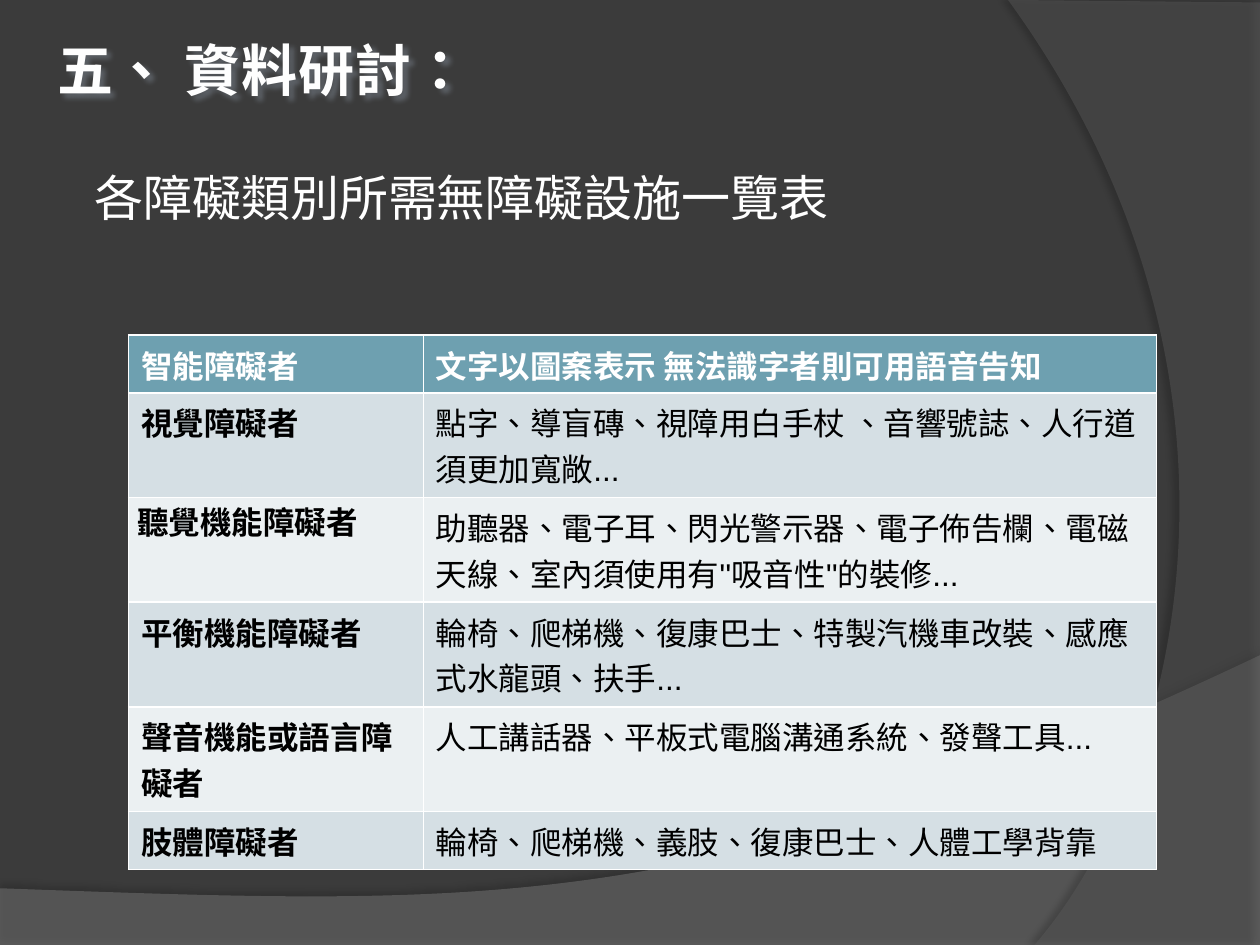
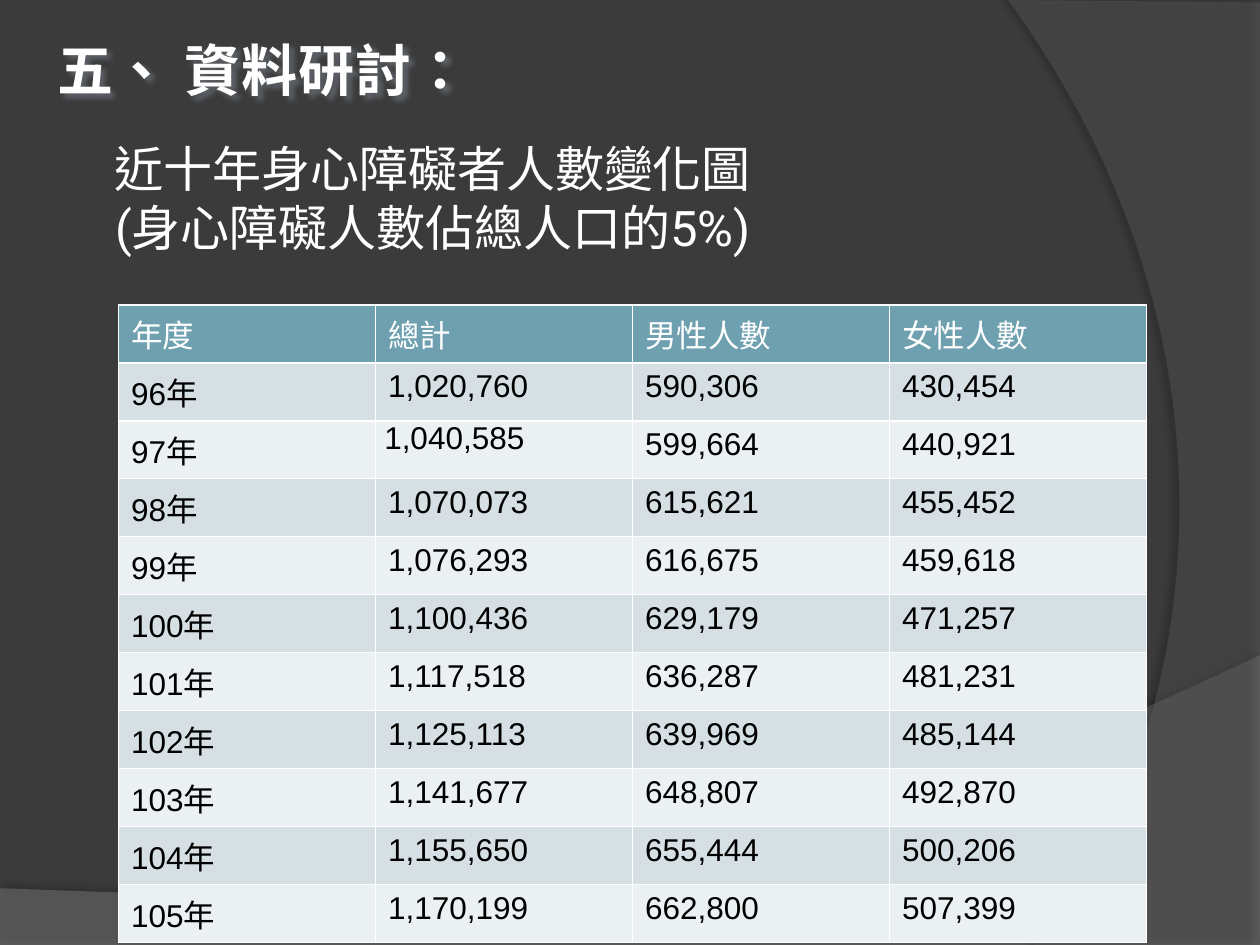
from dataclasses import dataclass

from lxml import etree
from pptx import Presentation
from pptx.dml.color import RGBColor
from pptx.enum.text import MSO_ANCHOR as Anchor, MSO_AUTO_SIZE as AutoSize, PP_ALIGN as Align
from pptx.oxml.ns import qn
from pptx.util import Inches, Pt

# Shared colours, fonts and sizes
BACKGROUND = RGBColor(0x3B, 0x3B, 0x3B)
WAVE_GREY = RGBColor(0x7F, 0x7F, 0x7F)
ARC_GREY = RGBColor(0x5E, 0x5E, 0x5E)
WHITE = RGBColor(0xFF, 0xFF, 0xFF)
HEADING_WHITE = RGBColor(0xFE, 0xFE, 0xFE)
HEADING_OUTLINE = RGBColor(0x71, 0x78, 0x81)
BLACK = RGBColor(0, 0, 0)
HEADER_FILL = RGBColor(0x6E, 0xA0, 0xB0)
BAND_FILLS = (RGBColor(0xEB, 0xF0, 0xF2), RGBColor(0xD5, 0xDF, 0xE4))
BODY_FONT = "Arial"
TITLE_FONT = "Roboto"
LANGUAGE = "zh-TW"
HEADING = "五、 資料研討： "
ONE_LINE = 0.46
TWO_LINES = 0.83

Point = tuple[float, float]


@dataclass(frozen=True)
class Shadow:
    alpha: int
    blur: float
    distance: float
    angle: int
    color: RGBColor = BLACK


@dataclass(frozen=True)
class Band:
    """Closed outline: straight corners, then one Bezier curve from the last corner."""
    corners: tuple[Point, ...]
    curve: tuple[Point, Point, Point]
    color: RGBColor
    alpha: int
    shadow: Shadow


@dataclass(frozen=True)
class Title:
    text: str
    left: float
    width: float
    align: Align


@dataclass(frozen=True)
class Grid:
    left: float
    top: float
    columns: tuple[float, ...]
    heights: tuple[float, ...]
    rows: tuple[tuple[str, ...], ...]
    bold_heads: bool
    tight_cell: tuple[int, int]


BANDS = (
    Band(((0, 7.05), (0, 7.51), (10, 7.51), (10, 5.2)),
         ((5.59, 7.29), (3.91, 7.19), (0, 7.05)),
         WAVE_GREY, 45, Shadow(35, 4, 3.5, 270)),
    Band(((10, 0.02), (10, 7.5), (8.21, 7.5)),
         ((9.35, 6.19), (10.18, 3), (8, 0)),
         ARC_GREY, 40, Shadow(45, 4, 4, 180)),
)
HEADING_SHADOW = Shadow(65, 3, 3, 45, HEADING_OUTLINE)

FACILITIES = (
    ("智能障礙者", "文字以圖案表示 無法識字者則可用語音告知"),
    ("視覺障礙者", "點字、導盲磚、視障用白手杖 、音響號誌、人行道須更加寬敞..."),
    ("聽覺機能障礙者", "助聽器、電子耳、閃光警示器、電子佈告欄、電磁天線、室內須使用有''吸音性''的裝修..."),
    ("平衡機能障礙者", "輪椅、爬梯機、復康巴士、特製汽機車改裝、感應式水龍頭、扶手..."),
    ("聲音機能或語言障礙者", "人工講話器、平板式電腦溝通系統、發聲工具..."),
    ("肢體障礙者", "輪椅、爬梯機、義肢、復康巴士、人體工學背靠"),
)
POPULATION = (
    ("年度", "總計", "男性人數", "女性人數"),
    ("96年", "1,020,760", "590,306", "430,454"),
    ("97年", "1,040,585", "599,664", "440,921"),
    ("98年", "1,070,073", "615,621", "455,452"),
    ("99年", "1,076,293", "616,675", "459,618"),
    ("100年", "1,100,436", "629,179", "471,257"),
    ("101年", "1,117,518", "636,287", "481,231"),
    ("102年", "1,125,113", "639,969", "485,144"),
    ("103年", "1,141,677", "648,807", "492,870"),
    ("104年", "1,155,650", "655,444", "500,206"),
    ("105年", "1,170,199", "662,800", "507,399"),
)
PAGES = (
    (Title("各障礙類別所需無障礙設施一覽表", 0.7, 8.17, Align.LEFT),
     Grid(1.02, 2.66, (2.34, 5.82), (ONE_LINE, *(TWO_LINES,) * 4, ONE_LINE),
          FACILITIES, True, (2, 0))),
    (Title("近十年身心障礙者人數變化圖(身心障礙人數佔總人口的5%)", 0.78, 5.31, Align.CENTER),
     Grid(0.94, 2.42, (2.04,) * 4, (ONE_LINE,) * len(POPULATION),
          POPULATION, False, (2, 1))),
)


def set_values(target, values: dict) -> None:
    for name, value in values.items():
        setattr(target, name, value)


def style_text(frame, text: str, color: RGBColor, align: Align = Align.LEFT, **font_values):
    """Fill the first paragraph with one span and return the span."""
    para = frame.paragraphs[0]
    para.alignment = align
    span = para.add_run()
    span.text = text
    set_values(span.font, font_values)
    span.font.color.rgb = color
    span.font._element.set("lang", LANGUAGE)
    return span


# XML helpers
def add_color(parent, color: RGBColor, alpha: int = 100) -> None:
    node = etree.SubElement(parent, qn("a:srgbClr"), val=str(color))
    if alpha < 100:
        etree.SubElement(node, qn("a:alpha"), val=str(alpha * 1000))


def make_line(tag: str, color: RGBColor, width: float):
    line = etree.Element(qn(tag), w=str(Pt(width)))
    add_color(etree.SubElement(line, qn("a:solidFill")), color)
    return line


def make_shadow(shadow: Shadow):
    effects = etree.Element(qn("a:effectLst"))
    outer = etree.SubElement(
        effects, qn("a:outerShdw"), blurRad=str(Pt(shadow.blur)),
        dist=str(Pt(shadow.distance)), dir=str(shadow.angle * 60000),
        algn="ctr", rotWithShape="0")
    add_color(outer, shadow.color, shadow.alpha)
    return effects


# Background bands
def bend_last_segments(shape) -> None:
    """Turn the last three straight segments into one Bezier curve."""
    segments = list(shape._element.iter(qn("a:lnTo")))[-3:]
    curve = etree.Element(qn("a:cubicBezTo"))
    segments[0].addprevious(curve)
    for segment in segments:
        curve.append(segment[0])
        segment.getparent().remove(segment)


def draw_band(page, band: Band) -> None:
    points = [(Inches(x), Inches(y)) for x, y in (*band.corners, *band.curve)]
    builder = page.shapes.build_freeform(*points[0])
    builder.add_line_segments(points[1:], close=False)
    shape = builder.convert_to_shape()
    bend_last_segments(shape)
    shape.fill.solid()
    shape.fill.fore_color.rgb = band.color
    shape.line.fill.background()
    properties = shape._element.spPr
    color = properties.find(qn("a:solidFill")).find(qn("a:srgbClr"))
    etree.SubElement(color, qn("a:alpha"), val=str(band.alpha * 1000))
    properties.append(make_shadow(band.shadow))


# Text
def draw_heading(page) -> None:
    box = page.shapes.add_textbox(Inches(0.31), Inches(0.23), Inches(3.66), Inches(0.64))
    box._element.spPr.append(make_shadow(HEADING_SHADOW))
    set_values(box.text_frame, {"word_wrap": False, "auto_size": AutoSize.SHAPE_TO_FIT_TEXT})
    span = style_text(box.text_frame, HEADING, HEADING_WHITE, Align.CENTER,
                      size=Pt(32), name=BODY_FONT, bold=True)
    properties = span.font._element
    properties.set("spc", "50")
    properties.insert(0, make_line("a:ln", HEADING_OUTLINE, 1))


def draw_title(page, title: Title) -> None:
    box = page.shapes.add_textbox(Inches(title.left), Inches(0.94),
                                  Inches(title.width), Inches(1.25))
    margins = {f"margin_{side}": Inches(0.05) for side in ("left", "top", "right", "bottom")}
    set_values(box.text_frame, {"word_wrap": True, "vertical_anchor": Anchor.MIDDLE, **margins})
    style_text(box.text_frame, title.text, WHITE, title.align, size=Pt(28), name=TITLE_FONT)


# Tables
def style_cell(cell, text: str, row: int, bold: bool) -> None:
    is_header = row == 0
    style_text(cell.text_frame, text, WHITE if is_header else BLACK,
               size=Pt(18), name=BODY_FONT, bold=bold)
    cell.fill.solid()
    cell.fill.fore_color.rgb = HEADER_FILL if is_header else BAND_FILLS[row % 2]
    properties = cell._tc.get_or_add_tcPr()
    for index, tag in enumerate(("a:lnL", "a:lnR", "a:lnT", "a:lnB")):
        properties.insert(index, make_line(tag, WHITE, 1))


def draw_grid(page, grid: Grid) -> None:
    frame = page.shapes.add_table(
        len(grid.rows), len(grid.columns), Inches(grid.left), Inches(grid.top),
        Inches(sum(grid.columns)), Inches(sum(grid.heights)))
    table = frame.table
    table.horz_banding = False
    for column, width in zip(table.columns, grid.columns):
        column.width = Inches(width)
    for row, height in zip(table.rows, grid.heights):
        row.height = Inches(height)
    for row, texts in enumerate(grid.rows):
        for column, text in enumerate(texts):
            bold = grid.bold_heads and 0 in (row, column)
            style_cell(table.cell(row, column), text, row, bold)
    set_values(table.cell(*grid.tight_cell), {
        "margin_left": Inches(0.07), "margin_right": Inches(0.07),
        "margin_top": 0, "margin_bottom": 0})


def main() -> None:
    deck = Presentation()
    set_values(deck, {"slide_width": Inches(10), "slide_height": Inches(7.5)})
    for title, grid in PAGES:
        page = deck.slides.add_slide(deck.slide_layouts[6])
        page.background.fill.solid()
        page.background.fill.fore_color.rgb = BACKGROUND
        for band in BANDS:
            draw_band(page, band)
        draw_title(page, title)
        draw_grid(page, grid)
        draw_heading(page)
    deck.save("out.pptx")


if __name__ == "__main__":
    main()
